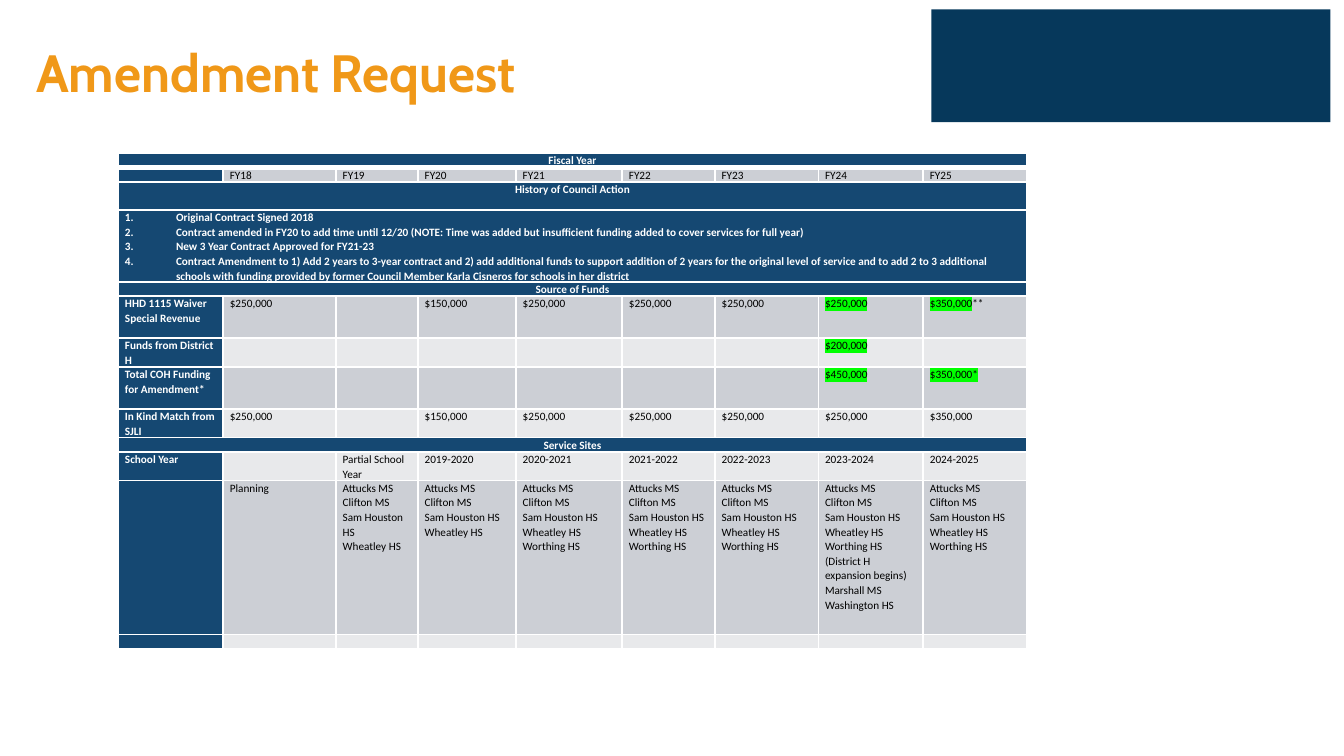
from lxml import etree
from pptx import Presentation
from pptx.dml.color import RGBColor
from pptx.enum.shapes import MSO_SHAPE
from pptx.enum.text import MSO_ANCHOR, PP_ALIGN
from pptx.oxml.ns import qn
from pptx.util import Inches, Pt

RECT = MSO_SHAPE.RECTANGLE
MIDDLE = MSO_ANCHOR.MIDDLE
CENTER, LEFT = PP_ALIGN.CENTER, PP_ALIGN.LEFT

WHITE = RGBColor(0xFF, 0xFF, 0xFF)
BLACK = RGBColor(0, 0, 0)
NAVY = RGBColor(0x06, 0x38, 0x5B)
BLUE = RGBColor(0x15, 0x48, 0x72)
ORANGE = RGBColor(0xF0, 0x98, 0x18)
GREY = RGBColor(0xCC, 0xCF, 0xD5)
PALE = RGBColor(0xE8, 0xE9, 0xEB)
GREEN = RGBColor(0, 0xFF, 0)

WIDE = Inches(10)
HIGH = WIDE * 9 // 16
LINE = 7.5  # points of row height for each line of table text
SIZE = 6
COLS = (0.78, 0.84, 0.61, 0.73, 0.79, 0.69, 0.77, 0.78, 0.77)

FOUR = "Attucks MS\nClifton MS\nSam Houston HS\nWheatley HS"
FIVE = FOUR + "\nWorthing HS"
EIGHT = FIVE + "\n(District H expansion begins)\nMarshall MS\nWashington HS"
ACTS = (
    "Original Contract Signed 2018\n"
    "Contract amended in FY20 to add time until 12/20 (NOTE: Time was added "
    "but insufficient funding added to cover services for full year)\n"
    "New 3 Year Contract Approved for FY21-23\n"
    "Contract Amendment to 1) Add 2 years to 3-year contract and 2) add "
    "additional funds to support addition of 2 years for the original level "
    "of service and to add 2 to 3 additional schools with funding provided by "
    "former Council Member Karla Cisneros for schools in her district"
)
YEARS = [f"FY{n}" for n in range(18, 26)]
TERMS = [f"{n}-{n + 1}" for n in range(2019, 2025)]
FUNDS = ["$250,000", "", "$150,000"] + ["$250,000"] * 3
NONE = [""] * 6

# Lines high, shade, label, values; no shade means one cell over all columns.
# Text between bars is highlighted.
ROWS = (
    (1, None, "Fiscal Year", ()),
    (1, GREY, "", YEARS),
    (2, None, "History of Council Action", ()),
    (5, None, ACTS, ()),
    (1, None, "Source of Funds", ()),
    (3, GREY, "HHD 1115 Waiver Special Revenue",
     FUNDS + ["|$250,000|", "|$350,000|**"]),
    (2, PALE, "Funds from District H", NONE + ["|$200,000|", ""]),
    (3, GREY, "Total COH Funding for Amendment*",
     NONE + ["|$450,000|", "|$350,000*|"]),
    (2, PALE, "In Kind Match from SJLI", FUNDS + ["$250,000", "$350,000"]),
    (1, None, "Service Sites", ()),
    (2, PALE, "School Year", ["", "Partial School Year"] + TERMS),
    (11, GREY, "", ["Planning", FOUR, FOUR, FIVE, FIVE, FIVE, EIGHT, FIVE]),
    (1, PALE, "", [""] * 8),
)


def set_font(para, name, size, color, bold):
    font = para.font
    font.name, font.size, font.bold = name, Pt(size), bold
    font.color.rgb = color


def add_edges(cell, base):
    """Draw white cell borders, the lower one base points wide."""
    props = cell._tc.get_or_add_tcPr()
    for tag, width in (("lnL", 1), ("lnR", 1), ("lnT", 1), ("lnB", base)):
        edge = etree.SubElement(props, qn("a:" + tag), w=str(Pt(width)))
        fill = etree.SubElement(edge, qn("a:solidFill"))
        etree.SubElement(fill, qn("a:srgbClr"), val=str(WHITE))


def add_number(para):
    props = para._p.get_or_add_pPr()
    props.set("marL", str(Inches(0.38)))
    props.set("indent", str(-Inches(0.38)))
    etree.SubElement(props, qn("a:buFont"), typeface="+mj-lt")
    etree.SubElement(props, qn("a:buAutoNum"), type="arabicPeriod")


def add_runs(para, text):
    for i, part in enumerate(text.split("|")):
        if not part:
            continue
        run = para.add_run()
        run.text = part
        if i % 2:
            mark = etree.SubElement(run._r.get_or_add_rPr(), qn("a:highlight"))
            etree.SubElement(mark, qn("a:srgbClr"), val=str(GREEN))


def fill_cell(cell, text, shade, align=LEFT, listed=False, base=1):
    add_edges(cell, base)
    cell.fill.solid()
    cell.fill.fore_color.rgb = shade
    cell.margin_left = cell.margin_right = Inches(0.05)
    cell.margin_top = cell.margin_bottom = 0
    head = shade == BLUE
    frame = cell.text_frame
    for i, line in enumerate(text.split("\n")):
        para = frame.add_paragraph() if i else frame.paragraphs[0]
        para.alignment, para.line_spacing = align, 1.07
        if listed:
            add_number(para)
        add_runs(para, line)
        set_font(para, "Calibri", SIZE, WHITE if head else BLACK, head)
        if not line:
            end = para._p.get_or_add_endParaRPr()
            end.set("sz", str(SIZE * 100))


def add_grid(slide):
    high = Pt(LINE * sum(row[0] for row in ROWS))
    table = slide.shapes.add_table(
        len(ROWS), len(COLS), Inches(0.88), Inches(1.14),
        Inches(sum(COLS)), high).table
    table.first_row = table.horz_banding = False
    for col, width in zip(table.columns, COLS):
        col.width = Inches(width)
    for r, (lines, shade, label, values) in enumerate(ROWS):
        table.rows[r].height = Pt(LINE * lines)
        first = table.cell(r, 0)
        if shade is None:
            first.merge(table.cell(r, len(COLS) - 1))
            listed = label == ACTS
            fill_cell(first, label, BLUE, LEFT if listed else CENTER,
                      listed, 1 if r else 3)
            continue
        fill_cell(first, label, BLUE)
        for c, text in enumerate(values, 1):
            fill_cell(table.cell(r, c), text, shade)


def add_block(slide):
    block = slide.shapes.add_shape(
        RECT, Inches(6.93), Inches(0.07), Inches(2.97), Inches(0.84))
    block.shadow.inherit = False
    block.fill.solid()
    block.fill.fore_color.rgb = NAVY
    block.line.fill.background()


def add_title(slide, text):
    box = slide.shapes.add_textbox(0, Inches(0.06), Inches(9), Inches(0.94))
    frame = box.text_frame
    frame.word_wrap = True
    frame.vertical_anchor = MIDDLE
    frame.margin_left = frame.margin_right = Inches(0.27)
    frame.margin_top = frame.margin_bottom = Inches(0.13)
    para = frame.paragraphs[0]
    para.text = text
    set_font(para, "Cabin", 28.1, ORANGE, True)


def main():
    deck = Presentation()
    deck.slide_width, deck.slide_height = WIDE, HIGH
    slide = deck.slides.add_slide(deck.slide_layouts[6])
    add_block(slide)
    add_title(slide, "Amendment Request")
    add_grid(slide)
    deck.save("out.pptx")


if __name__ == "__main__":
    main()
